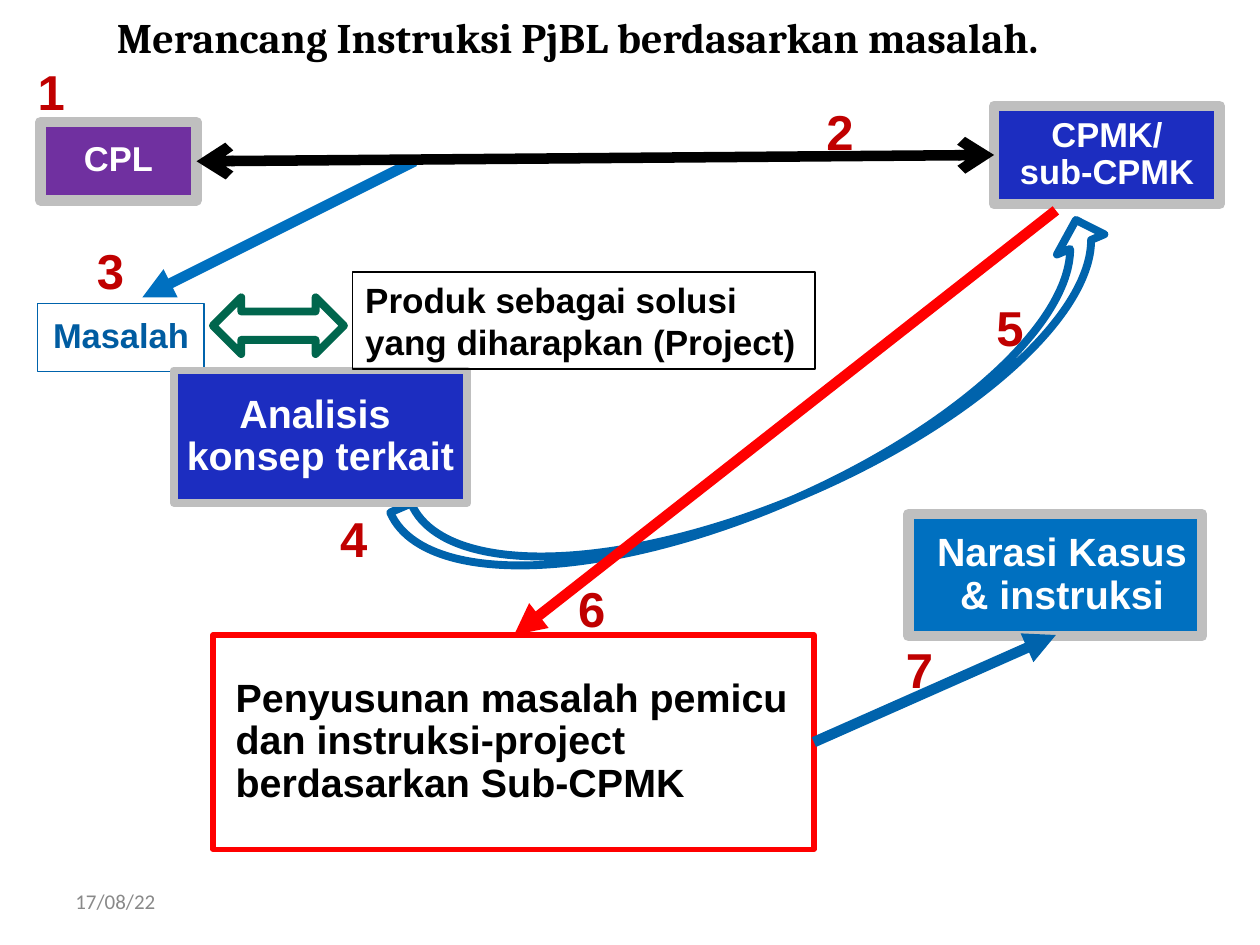
from lxml import etree
from pptx import Presentation
from pptx.dml.color import RGBColor
from pptx.enum.shapes import MSO_CONNECTOR, MSO_SHAPE
from pptx.enum.text import MSO_ANCHOR, PP_ALIGN
from pptx.oxml.ns import qn
from pptx.util import Inches, Pt

RECTANGLE = MSO_SHAPE.RECTANGLE
CURVED_ARROW = MSO_SHAPE.CURVED_UP_ARROW
DOUBLE_ARROW = MSO_SHAPE.LEFT_RIGHT_ARROW
STRAIGHT = MSO_CONNECTOR.STRAIGHT
TOP, MIDDLE = MSO_ANCHOR.TOP, MSO_ANCHOR.MIDDLE
LEFT, CENTER = PP_ALIGN.LEFT, PP_ALIGN.CENTER

BLACK = RGBColor(0x00, 0x00, 0x00)
WHITE = RGBColor(0xFF, 0xFF, 0xFF)
PURPLE = RGBColor(0x70, 0x30, 0xA0)
NAVY = RGBColor(0x1C, 0x2D, 0xC0)
BLUE = RGBColor(0x00, 0x70, 0xC0)
DEEP_BLUE = RGBColor(0x00, 0x63, 0xAC)
TEXT_BLUE = RGBColor(0x00, 0x5C, 0xA1)
GREEN = RGBColor(0x00, 0x66, 0x4D)
RED = RGBColor(0xFF, 0x00, 0x00)
DARK_RED = RGBColor(0xC0, 0x00, 0x00)
SILVER = RGBColor(0xBF, 0xBF, 0xBF)
GRAY = RGBColor(0x89, 0x89, 0x89)

PADDING = (0.1, 0.05)
TIGHT_PADDING = (0.07, 0.04)


def write(shape, lines, size, color, font="Arial", bold=True, align=LEFT,
          anchor=TOP, spacing=None, padding=PADDING, indent=0, wrap=True):
    """Fill a shape with evenly formatted paragraphs."""
    frame = shape.text_frame
    frame.word_wrap = wrap
    frame.vertical_anchor = anchor
    frame.margin_left = frame.margin_right = Inches(padding[0])
    frame.margin_top = frame.margin_bottom = Inches(padding[1])
    frame.text = "\n".join(lines)
    for paragraph in frame.paragraphs:
        paragraph.alignment = align
        if spacing:
            paragraph.line_spacing = spacing
        if indent:
            properties = paragraph._p.get_or_add_pPr()
            properties.set("marL", str(Inches(indent)))
            properties.set("indent", "0")
        paragraph.font.name = font
        paragraph.font.size = Pt(size)
        paragraph.font.bold = bold
        paragraph.font.color.rgb = color


def add_outline(slide, box, line_color, line_width, fill=None, kind=RECTANGLE):
    shape = slide.shapes.add_shape(kind, *map(Inches, box))
    shape.shadow.inherit = False
    if fill is None:
        shape.fill.background()
    else:
        shape.fill.solid()
        shape.fill.fore_color.rgb = fill
    shape.line.color.rgb = line_color
    shape.line.width = Pt(line_width)
    return shape


def add_step(slide, box, lines, size, color, line_color, line_width,
             fill=None, align=CENTER, spacing=0.9, padding=TIGHT_PADDING, indent=0):
    """A framed box that holds one step of the design."""
    shape = add_outline(slide, box, line_color, line_width, fill)
    write(shape, lines, size, color, align=align, anchor=MIDDLE,
          spacing=spacing, padding=padding, indent=indent)


def add_label(slide, box, text, size, color, **options):
    label = slide.shapes.add_textbox(*map(Inches, box))
    write(label, [text], size, color, **options)


def add_arrow(slide, start, end, color, head=None, tail="triangle"):
    arrow = slide.shapes.add_connector(STRAIGHT, *map(Inches, start + end))
    arrow.line.color.rgb = color
    arrow.line.width = Pt(6)
    line = arrow.line._get_or_add_ln()
    for tag, ending in (("a:headEnd", head), ("a:tailEnd", tail)):
        if ending:
            etree.SubElement(line, qn(tag)).set("type", ending)
    etree.SubElement(arrow._element.spPr, qn("a:effectLst"))


def add_curved_arrow(slide, box):
    arrow = add_outline(slide, box, DEEP_BLUE, 4.5, kind=CURVED_ARROW)
    arrow.rotation = 336.9
    for index, value in enumerate((0.156, 0.353, 0.167)):
        arrow.adjustments[index] = value


def add_outcomes(slide):
    """Upper row: outcomes and the problem drawn from them."""
    add_step(slide, (0.32, 0.97, 1.24, 0.62), ["CPL"], 19.7, WHITE, SILVER, 6,
             PURPLE, spacing=0.83, padding=PADDING)
    add_step(slide, (0.3, 2.41, 1.32, 0.54), ["Masalah"], 19.7, TEXT_BLUE,
             DEEP_BLUE, 0.75)
    add_arrow(slide, (3.29, 1.28), (1.13, 2.36), BLUE)
    add_step(slide, (7.89, 0.84, 1.79, 0.78), ["CPMK/", "sub-CPMK"], 19.7, WHITE,
             SILVER, 6, NAVY)
    add_arrow(slide, (1.56, 1.28), (7.89, 1.23), BLACK, head="arrow", tail="arrow")


def add_development(slide):
    """Lower part: concept analysis, trigger problem and narrative."""
    add_curved_arrow(slide, (3.08, 2.82, 6.12, 1.16))
    add_step(slide, (1.38, 2.94, 2.33, 1.05), ["Analisis ", "konsep terkait "],
             22.5, WHITE, SILVER, 4.5, NAVY)
    add_step(slide, (1.69, 5.04, 4.77, 1.7),
             ["Penyusunan masalah pemicu dan instruksi-project berdasarkan Sub-CPMK"],
             22.5, BLACK, RED, 3, align=LEFT, indent=0.11)
    add_arrow(slide, (8.38, 1.67), (4.08, 5.04), RED)
    add_step(slide, (7.21, 4.08, 2.33, 0.97), ["Narasi Kasus & instruksi"],
             22.5, WHITE, SILVER, 6, BLUE, indent=0.11)
    add_arrow(slide, (6.46, 5.89), (8.38, 5.04), DEEP_BLUE)


def add_step_numbers(slide):
    corners = ((0.2, 0.44), (6.46, 0.76), (0.67, 1.86), (2.6, 3.99),
               (7.81, 2.31), (4.49, 4.54), (7.09, 5.03))
    for number, corner in enumerate(corners, start=1):
        add_label(slide, corner + (0.42, 0.57), str(number), 28, DARK_RED, wrap=False)


def add_product(slide):
    """The expected product, linked both ways to the problem."""
    add_outline(slide, (1.69, 2.36, 1.04, 0.45), GREEN, 4.5, kind=DOUBLE_ARROW)
    product = add_outline(slide, (2.8, 2.16, 3.67, 0.77), BLACK, 0.75)
    write(product, ["Produk sebagai solusi yang diharapkan (Project)"], 20, BLACK)


def main():
    presentation = Presentation()
    presentation.slide_width = Inches(10)
    presentation.slide_height = Inches(7.5)
    slide = presentation.slides.add_slide(presentation.slide_layouts[6])

    add_outcomes(slide)
    # Title and date
    add_label(slide, (0.83, 0.04, 8.73, 0.5),
              "Merancang Instruksi PjBL berdasarkan masalah.", 24, BLACK, font="Cambria")
    add_label(slide, (0.5, 6.95, 2.33, 0.4), "17/08/22", 12, GRAY,
              font="Calibri", bold=False, anchor=MIDDLE)
    add_development(slide)
    add_step_numbers(slide)
    add_product(slide)
    presentation.save("out.pptx")


if __name__ == "__main__":
    main()
